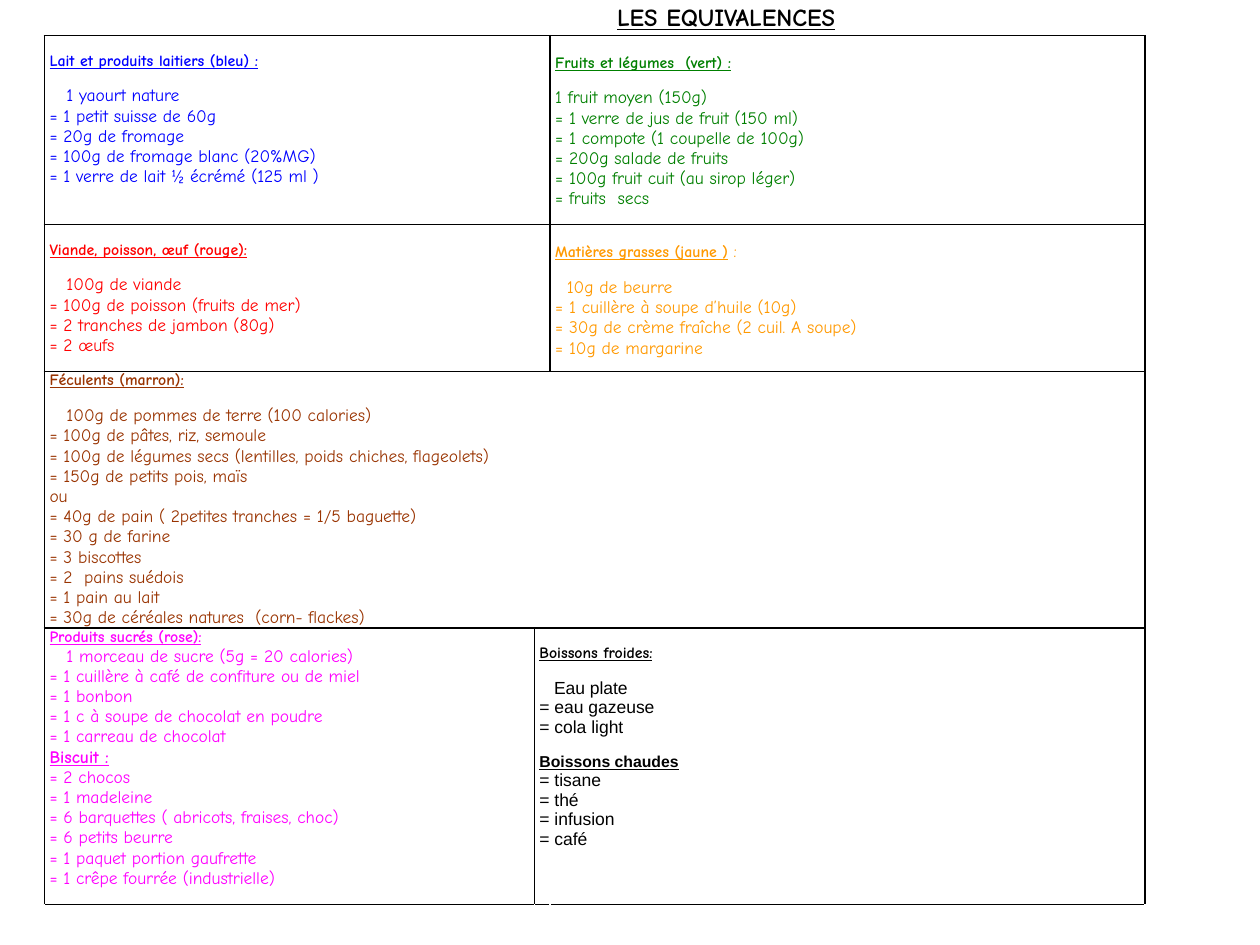
from dataclasses import dataclass

from lxml import etree
from pptx import Presentation
from pptx.dml.color import RGBColor
from pptx.enum import text
from pptx.oxml import ns
from pptx.util import Pt


@dataclass(frozen=True)
class Theme:
    font: str = "Comic Neue"
    plain_font: str = "Arial"
    title: float = 14
    heading: float = 9
    body: float = 10
    gap: float = 9.2
    black: str = "000000"
    blue: str = "0000FF"
    green: str = "008000"
    red: str = "FF0000"
    orange: str = "FF9900"
    brown: str = "993300"
    pink: str = "FF00FF"


T = Theme()


def style(r, size, color, font=T.font, strong=False):
    r.font.name = font
    r.font.size = Pt(size)
    r.font.bold = r.font.underline = strong
    r.font.color.rgb = RGBColor.from_string(color)


def add_border(cell, side, color):
    tc_pr = cell._tc.get_or_add_tcPr()
    ln = etree.SubElement(tc_pr, ns.qn(f"a:ln{side}"), w=str(Pt(1)))
    fill = etree.SubElement(ln, ns.qn("a:solidFill"))
    etree.SubElement(fill, ns.qn("a:srgbClr"), val=color)


# Each group: row, column, columns spanned, top margin, colour, blocks.
# Each block: heading, heading size, heading font, text after it, space before,
# space after, body font, indent of the first body line, body lines.
GROUPS = [
    (0, 0, 2, 9.2, T.blue, [
        ("Lait et produits laitiers (bleu) :", T.heading, T.font, "", 0, T.gap, T.font, 9.7, [
            "1 yaourt nature", "= 1 petit suisse de 60g", "= 20g de fromage",
            "= 100g de fromage blanc (20%MG)", "= 1 verre de lait ½ écrémé (125 ml )"])]),
    (0, 2, 1, 10.4, T.green, [
        ("Fruits et légumes  (vert) :", T.heading, T.font, "", 0, T.gap, T.font, 0, [
            "1 fruit moyen (150g)", "= 1 verre de jus de fruit (150 ml)",
            "= 1 compote (1 coupelle de 100g)", "= 200g salade de fruits",
            "= 100g fruit cuit (au sirop léger)", "= fruits  secs"])]),
    (1, 0, 2, 9.2, T.red, [
        ("Viande, poisson, œuf (rouge):", T.heading, T.font, "", 0, T.gap, T.font, 9.7, [
            "100g de viande", "= 100g de poisson (fruits de mer)",
            "= 2 tranches de jambon (80g)", "= 2 œufs"])]),
    (1, 2, 1, 9.6, T.orange, [
        ("Matières grasses (jaune )", T.heading, T.font, " :", 0, T.gap, T.font, 6.6, [
            "10g de beurre", "= 1 cuillère à soupe d’huile (10g)",
            "= 30g de crème fraîche (2 cuil. A soupe)", "= 10g de margarine"])]),
    (2, 0, 3, 0, T.brown, [
        ("Féculents (marron):", T.heading, T.font, "", 0, T.gap, T.font, 9.7, [
            "100g de pommes de terre (100 calories)", "= 100g de pâtes, riz, semoule",
            "= 100g de légumes secs (lentilles, poids chiches, flageolets)",
            "= 150g de petits pois, maïs", "ou",
            "= 40g de pain ( 2petites tranches = 1/5 baguette)", "= 30 g de farine",
            "= 3 biscottes", "= 2  pains suédois", "= 1 pain au lait",
            "= 30g de céréales natures  (corn- flackes)"])]),
    (3, 0, 1, 0, T.pink, [
        ("Produits sucrés (rose):", T.heading, T.font, "", 0, 0, T.font, 9.7, [
            "1 morceau de sucre (5g = 20 calories)",
            "= 1 cuillère à café de confiture ou de miel", "= 1 bonbon",
            "= 1 c à soupe de chocolat en poudre", "= 1 carreau de chocolat"]),
        ("Biscuit :", T.body, T.font, "", 0, 0, T.font, 0, [
            "= 2 chocos", "= 1 madeleine", "= 6 barquettes ( abricots, fraises, choc)",
            "= 6 petits beurre", "= 1 paquet portion gaufrette",
            "= 1 crêpe fourrée (industrielle)"])]),
    (3, 1, 2, 9.2, T.black, [
        ("Boissons froides:", T.heading, T.font, "", 0, T.gap, T.plain_font, 8.3, [
            "Eau plate", "= eau gazeuse", "= cola light"]),
        ("Boissons chaudes", T.heading, T.plain_font, "", T.gap, 0, T.plain_font, 0, [
            "= tisane", "= thé", "= infusion", "= café"])]),
]
COLUMNS = [280, 9, 340]
ROWS = [108, 84, 146, 158, 16]

prs = Presentation()
prs.slide_width, prs.slide_height = Pt(720), Pt(540)
s = prs.slides.add_slide(prs.slide_layouts[6])

# Table grid
table = s.shapes.add_table(len(ROWS), len(COLUMNS), Pt(25.4), Pt(20.4),
                           Pt(sum(COLUMNS)), Pt(sum(ROWS))).table
table.first_row = table.horz_banding = False
for column, width in zip(table.columns, COLUMNS):
    column.width = Pt(width)
for row, height in zip(table.rows, ROWS):
    row.height = Pt(height)
for row, col, span, *_ in GROUPS:
    if span > 1:
        table.cell(row, col).merge(table.cell(row, col + span - 1))

last_row, last_col = len(ROWS) - 1, len(COLUMNS) - 1
for row in range(len(ROWS)):
    for col in range(len(COLUMNS)):
        cell = table.cell(row, col)
        cell.margin_left = cell.margin_right = Pt(2.9)
        cell.margin_top = cell.margin_bottom = 0
        if row == last_row:
            sides = "T"
            cell.text_frame.paragraphs[0].font.size = Pt(T.body)
        elif cell.is_spanned:
            sides = "RTB" if col == last_col else "TB"
        else:
            sides = "LRTB"
        for side in sides:
            add_border(cell, side, T.black)
        cell.fill.background()

# Food groups
for row, col, _, top, color, blocks in GROUPS:
    cell = table.cell(row, col)
    cell.margin_top = Pt(top)
    tf = cell.text_frame
    for i, (heading, size, head_font, tail, before, after, font, indent, lines) in enumerate(blocks):
        p = tf.add_paragraph() if i else tf.paragraphs[0]
        p.text = heading
        style(p.runs[0], size, color, head_font, strong=True)
        if before:
            p.space_before = Pt(before)
        if tail:
            r = p.add_run()
            r.text = tail
            style(r, T.body, color)
        for j, line in enumerate(lines):
            p = tf.add_paragraph()
            p.text = line
            style(p.runs[0], T.body, color, font)
            if j == 0:
                p.space_before = Pt(after)
                p._p.get_or_add_pPr().set("marL", str(Pt(indent)))

# Title, with its underline running on to the left across a tab
sp = s.shapes.add_textbox(0, Pt(-3.6), Pt(700), Pt(42.5))
tf = sp.text_frame
tf.word_wrap = True
tf.vertical_anchor = text.MSO_ANCHOR.TOP
tf.margin_left, tf.margin_top, tf.margin_bottom = Pt(222.9), Pt(4.6), 0
p = tf.paragraphs[0]
tabs = etree.SubElement(p._p.get_or_add_pPr(), ns.qn("a:tabLst"))
etree.SubElement(tabs, ns.qn("a:tab"), pos=str(Pt(129.7)), algn="l")
r = p.add_run()
r.text = "\tLES EQUIVALENCES"
style(r, T.title, T.black, strong=True)

prs.save("out.pptx")
